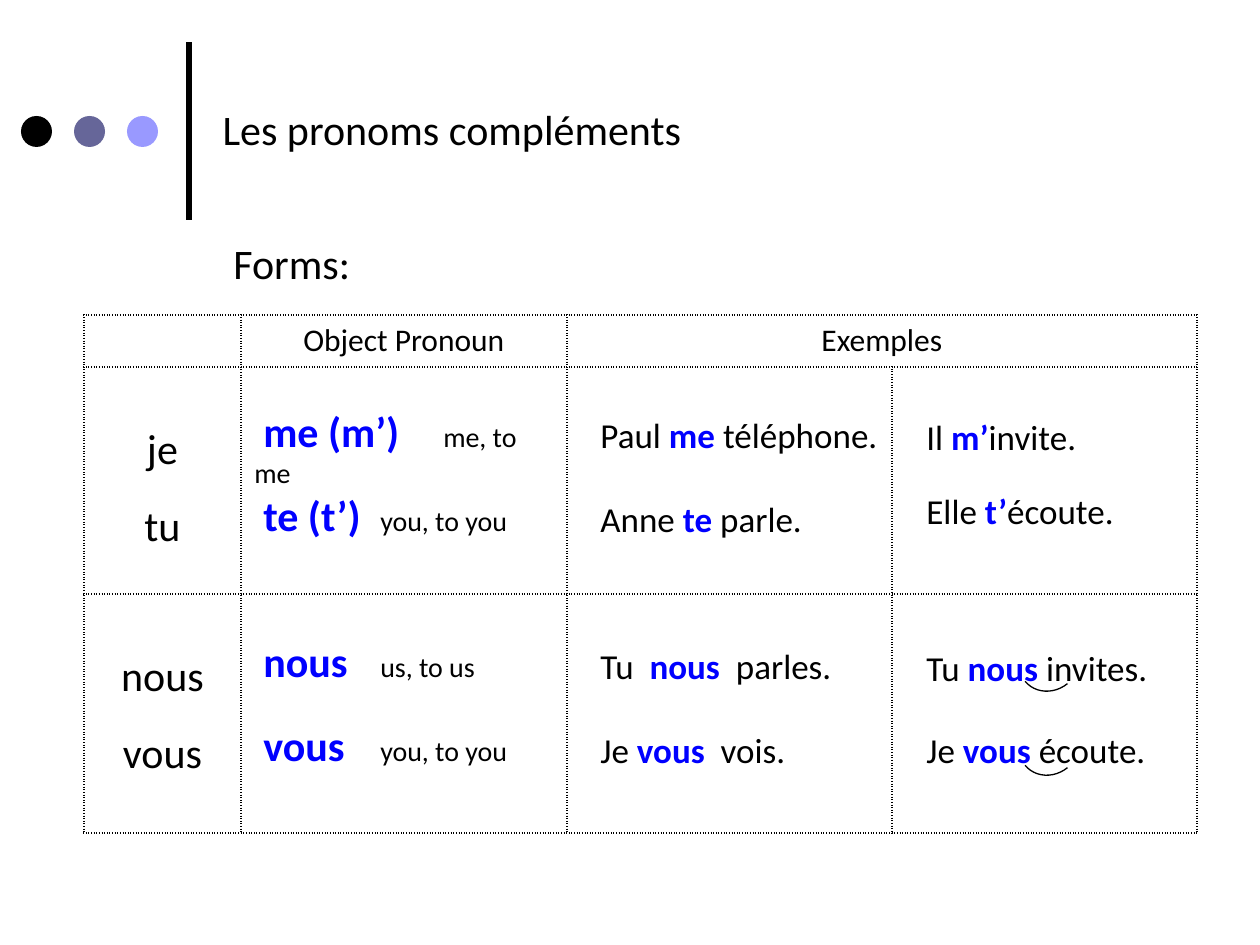
from lxml.etree import SubElement
from pptx import Presentation
from pptx.dml.color import RGBColor
from pptx.enum.shapes import MSO_CONNECTOR as Connector, MSO_SHAPE as Preset
from pptx.enum.text import MSO_ANCHOR as Anchor, PP_ALIGN as Align
from pptx.oxml.ns import qn
from pptx.util import Emu, Pt

FONT = "Calibri"
BLACK, BLUE = "000000", "0000FF"
DOT_COLOURS = [BLACK, "666699", "9999FF"]

COLUMNS = [157, 326, 325, 305]
ROWS = [52, 227, 239]
HEADERS = [(1, "Object Pronoun"), (2, "Exemples")]
SUBJECTS = [("je", "tu"), ("nous", "vous")]

# top, pronoun, tab position of the meaning, meaning
PRONOUNS = [
    (399, "me (m’)", 164, "me, to me"),
    (483, "te (t’)", 165, "you, to you"),
    (629, "nous", 179, "us, to us"),
    (713, "vous", 157, "you, to you"),
]
# left, top, width, words before, pronoun, words after
EXAMPLES = [
    (588, 407, 357, "Paul ", "me ", "téléphone."),
    (588, 491, 252, "Anne ", "te ", "parle."),
    (588, 638, 357, "Tu  ", "nous  ", "parles."),
    (588, 722, 357, "Je ", "vous  ", "vois."),
    (914, 409, 252, "Il ", "m’", "invite."),
    (914, 483, 273, "Elle ", "t’", "écoute."),
]
# The same fields, then the top of the liaison arc
LIAISONS = [
    (914, 640, 273, "Tu ", "nous", " invites.", 633),
    (914, 722, 273, "Je ", "vous ", "écoute.", 717),
]


def px(length):
    return Emu(round(length * 914400 / 126))


def colour(code):
    return RGBColor.from_string(code)


def style(span, size, code=BLACK, bold=False):
    font = span.font
    font.name, font.size, font.bold = FONT, Pt(size), bold
    font.color.rgb = colour(code)


def add_spans(para, size, spans):
    for text, code, bold in spans:
        span = para.add_run()
        span.text = text
        style(span, size, code, bold)


def add_text(shapes, left, top, width, height, size, spans):
    box = shapes.add_textbox(px(left), px(top), px(width), px(height))
    box.text_frame.word_wrap = True
    para = box.text_frame.paragraphs[0]
    add_spans(para, size, spans)
    return para


def add_ornament(page):
    bar = page.shapes.add_connector(
        Connector.STRAIGHT, px(189), px(220), px(189), px(42))
    bar.line.color.rgb = colour(BLACK)
    bar.line.width = Pt(3)
    SubElement(bar.element.spPr, qn("a:effectLst"))
    for index, code in enumerate(DOT_COLOURS):
        dot = page.shapes.add_shape(
            Preset.OVAL, px(21 + 53 * index), px(116), px(31), px(31))
        dot.shadow.inherit = False
        dot.fill.solid()
        dot.fill.fore_color.rgb = colour(code)
        dot.line.fill.background()


def add_title(page, text):
    title = page.shapes.title
    title.left, title.top, title.width, title.height = map(px, (210, 97, 945, 64))
    frame = title.text_frame
    frame.text = text
    frame.vertical_anchor = Anchor.TOP
    frame.paragraphs[0].alignment = Align.LEFT
    style(frame.paragraphs[0].runs[0], 24)


def border_cell(cell):
    properties = cell._tc.get_or_add_tcPr()
    for side in ("lnL", "lnR", "lnT", "lnB"):
        line = SubElement(properties, qn(f"a:{side}"), w=str(Pt(1)))
        fill = SubElement(line, qn("a:solidFill"))
        SubElement(fill, qn("a:srgbClr"), val=BLACK)
        SubElement(line, qn("a:prstDash"), val="sysDot")
    cell.fill.background()


def fill_cell(cell, lines, size, spacings):
    cell.text_frame.text = "\n".join(lines)
    for para, spacing in zip(cell.text_frame.paragraphs, spacings):
        para.alignment = Align.CENTER
        para.line_spacing = spacing
        style(para.runs[0], size)


def add_grid(page):
    frame = page.shapes.add_table(len(ROWS), len(COLUMNS), px(84), px(315),
                                  px(sum(COLUMNS)), px(sum(ROWS)))
    table = frame.table
    table.first_row = table.horz_banding = False
    for column, width in zip(table.columns, COLUMNS):
        column.width = px(width)
    for row, height in zip(table.rows, ROWS):
        row.height = px(height)
    for cell in table.iter_cells():
        border_cell(cell)
    table.cell(0, 2).merge(table.cell(0, 3))
    for column, text in HEADERS:
        fill_cell(table.cell(0, column), [text], 18, [1.0])
    for row, lines in enumerate(SUBJECTS, start=1):
        fill_cell(table.cell(row, 0), lines, 24, [2.0, 1.5])


def add_pronoun(page, top, pronoun, tab, meaning):
    para = add_text(page.shapes, 242, top, 315, 64, 24, [(pronoun, BLUE, True)])
    add_spans(para, 16, [("\t" + meaning, BLACK, False)])
    # First-line indent and a tab stop for the meaning
    properties = para._p.get_or_add_pPr()
    properties.set("marL", "0")
    properties.set("indent", str(px(9)))
    stops = SubElement(properties, qn("a:tabLst"))
    SubElement(stops, qn("a:tab"), pos=str(px(tab)), algn="l")


def add_example(shapes, left, top, width, before, pronoun, after):
    add_text(shapes, left, top, width, 55, 20,
             [(before, BLACK, False), (pronoun, BLUE, True), (after, BLACK, False)])


def add_liaison(page, *example, arc_top):
    group = page.shapes.add_group_shape()
    add_example(group.shapes, *example)
    arc = group.shapes.add_shape(Preset.ARC, px(1018), px(arc_top), px(63), px(57))
    arc.rotation = 141.1
    arc.shadow.inherit = False
    arc.fill.background()
    arc.line.color.rgb = colour(BLACK)
    arc.line.width = Pt(0.75)


def main():
    deck = Presentation()
    deck.slide_width, deck.slide_height = px(1260), px(945)
    page = deck.slides.add_slide(deck.slide_layouts[5])

    # Heading
    add_ornament(page)
    add_title(page, "Les pronoms compléments")
    add_text(page.shapes, 221, 231, 399, 63, 24, [("Forms:", BLACK, False)])

    # Table and the words laid over it
    add_grid(page)
    for pronoun in PRONOUNS:
        add_pronoun(page, *pronoun)
    for example in EXAMPLES:
        add_example(page.shapes, *example)
    for *example, arc_top in LIAISONS:
        add_liaison(page, *example, arc_top=arc_top)

    deck.save("out.pptx")


if __name__ == "__main__":
    main()
